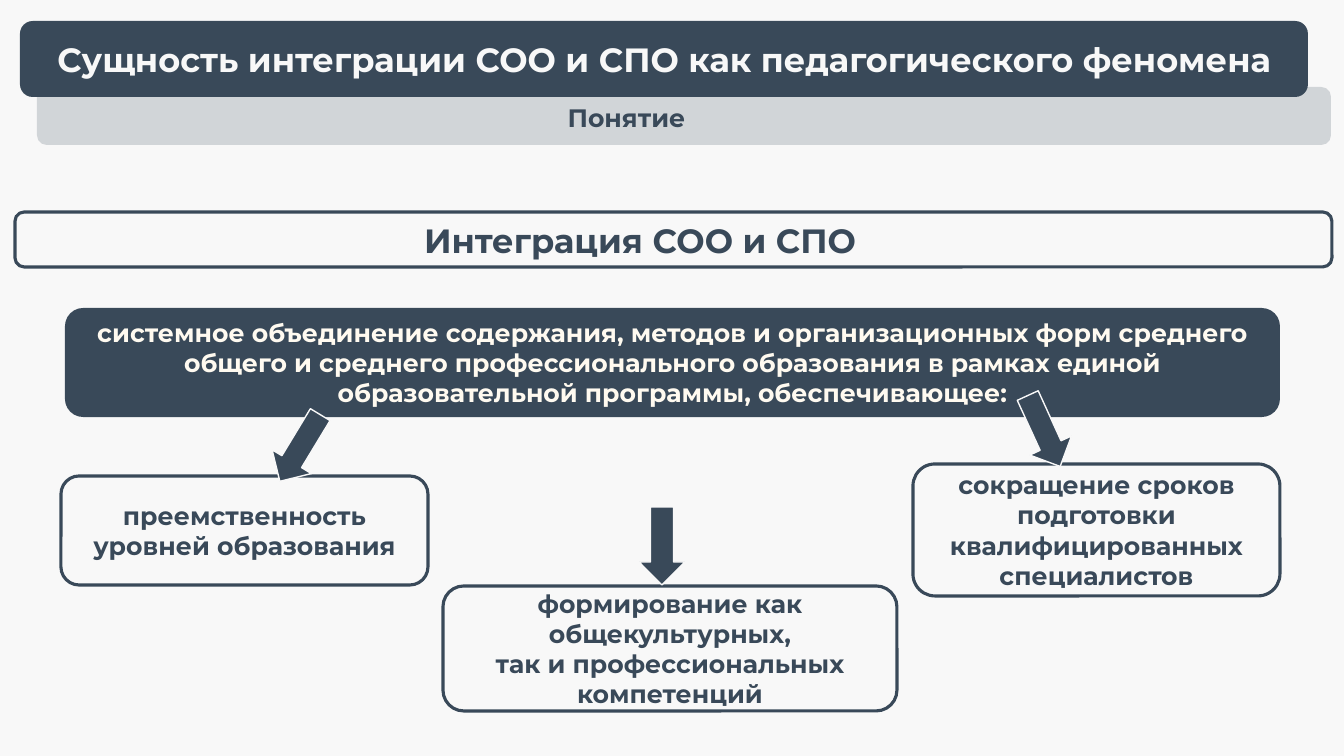
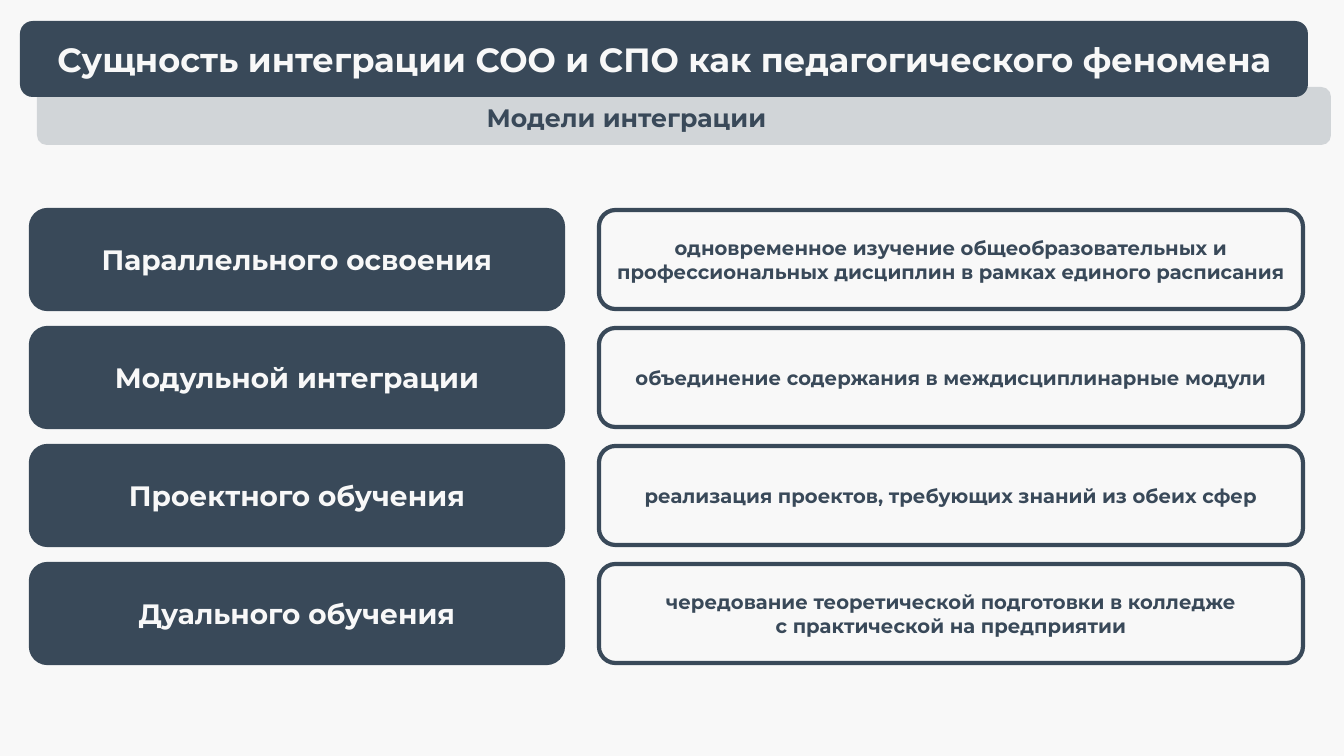
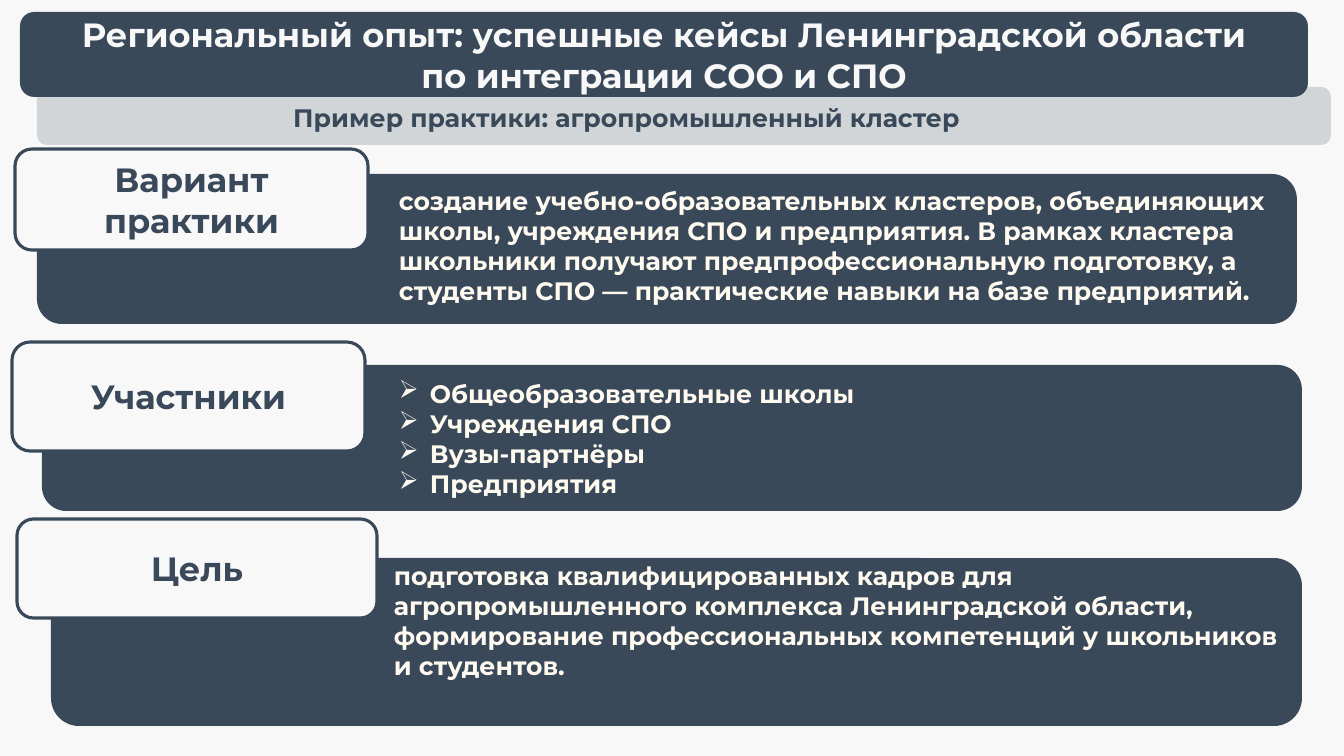
"""Three slides on integrating general secondary and vocational education."""
from lxml import etree
from pptx import Presentation
from pptx.dml.color import RGBColor
from pptx.enum.shapes import MSO_SHAPE
from pptx.enum.text import MSO_ANCHOR, PP_ALIGN
from pptx.oxml.ns import qn
from pptx.util import Emu, Pt

ROUND, ARROW = MSO_SHAPE.ROUNDED_RECTANGLE, MSO_SHAPE.DOWN_ARROW
LEFT, CENTER = PP_ALIGN.LEFT, PP_ALIGN.CENTER
TOP, MIDDLE = MSO_ANCHOR.TOP, MSO_ANCHOR.MIDDLE
SLATE, PAPER, CREAM = "394959", "F8F8F8", "FFFAF0"
FONT = "Montserrat"
BULLET, INDENT = "➢", 31

ESSENCE = "Сущность интеграции СОО и СПО как педагогического феномена"
REGION = "Региональный опыт: успешные кейсы Ленинградской области\nпо интеграции СОО и СПО"

TERM = "Интеграция СОО и СПО"
DEFINITION = ("системное объединение содержания, методов и организационных форм "
              "среднего общего и среднего профессионального образования в рамках "
              "единой образовательной программы, обеспечивающее:")
OUTCOMES = [
    ("преемственность уровней образования", (61, 476, 367, 109), (277, 409), 31.2),
    ("формирование как общекультурных,\nтак и профессиональных компетенций",
     (443, 586, 454, 125), (639, 507), 0),
    ("сокращение сроков подготовки квалифицированных специалистов",
     (913, 464, 367, 132), (1021, 392), 335.4),
]
MODELS = [
    ("Параллельного освоения",
     "одновременное изучение общеобразовательных и профессиональных дисциплин "
     "в рамках единого расписания"),
    ("Модульной интеграции", "объединение содержания в междисциплинарные модули"),
    ("Проектного обучения", "реализация проектов, требующих знаний из обеих сфер"),
    ("Дуального обучения",
     "чередование теоретической подготовки в колледже\nс практической на предприятии"),
]
CASE = [
    (["Вариант", "практики"], (15, 149, 353, 101), (37, 174, 1260, 150),
     ["создание учебно-образовательных кластеров, объединяющих школы, учреждения "
      "СПО и предприятия. В рамках кластера школьники получают предпрофессиональную "
      "подготовку, а студенты СПО — практические навыки на базе предприятий."],
     (389, 180, 897, 130), False),
    (["Участники"], (12, 342, 353, 109), (42, 365, 1260, 146),
     ["Общеобразовательные школы", "Учреждения СПО", "Вузы-партнёры", "Предприятия"],
     (389, 373, 897, 130), True),
    (["Цель"], (17, 519, 360, 99), (51, 558, 1251, 168),
     ["подготовка квалифицированных кадров для агропромышленного комплекса "
      "Ленинградской области, формирование профессиональных компетенций у школьников "
      "и студентов."],
     (384, 555, 907, 130), False),
]


def px(n):
    return Emu(round(n * 914400 / 100.8))


def rgb(value):
    return RGBColor.from_string(value)


def write(shape, paragraphs, size, color, align=CENTER, anchor=MIDDLE, bullets=False):
    tf = shape.text_frame
    tf.word_wrap = True
    tf.vertical_anchor = anchor
    for i, text in enumerate(paragraphs):
        p = tf.add_paragraph() if i else tf.paragraphs[0]
        p.text = text
        p.alignment = align
        for r in p.runs:
            r.font.name, r.font.size, r.font.bold = FONT, Pt(size), True
            r.font.color.rgb = rgb(color)
        if bullets:
            pPr = p._p.get_or_add_pPr()
            pPr.set("marL", str(px(INDENT)))
            pPr.set("indent", str(-px(INDENT)))
            etree.SubElement(pPr, qn("a:buChar")).set("char", BULLET)


def add_panel(s, at, fill=None, line=None, width=2.25, kind=ROUND):
    sp = s.shapes.add_shape(kind, *map(px, at))
    sp.shadow.inherit = False
    if fill:
        sp.fill.solid()
        sp.fill.fore_color.rgb = rgb(fill)
    else:
        sp.fill.background()
    if line:
        sp.line.color.rgb = rgb(line)
        sp.line.width = Pt(width)
    else:
        sp.line.fill.background()
    return sp


def add_text(s, at, paragraphs, size, color, align=CENTER, bullets=False):
    tb = s.shapes.add_textbox(*map(px, at))
    write(tb, paragraphs, size, color, align, TOP, bullets)


def add_slide(prs, title, subtitle, top=21):
    s = prs.slides.add_slide(prs.slide_layouts[6])
    s.background.fill.solid()
    s.background.fill.fore_color.rgb = rgb(PAPER)
    band = add_panel(s, (37, 87, 1294, 58), SLATE)
    tint = band._element.spPr.find(qn("a:solidFill")).find(qn("a:srgbClr"))
    etree.SubElement(tint, qn("a:alpha")).set("val", "20000")
    add_text(s, (114, 97, 1025, 40), [subtitle], 18, SLATE)
    write(add_panel(s, (20, top, 1288, 97 - top), SLATE), [title], 24, PAPER)
    return s


def concept_slide(prs):
    s = add_slide(prs, ESSENCE, "Понятие")
    add_panel(s, (15, 212, 1317, 55), PAPER, SLATE)
    add_text(s, (26, 215, 1228, 50), [TERM], 24, SLATE)
    write(add_panel(s, (65, 308, 1215, 109), SLATE), [DEFINITION], 18, CREAM)
    for text, box, _, _ in OUTCOMES:
        write(add_panel(s, box, line=SLATE), [text], 18, SLATE)
    for _, _, corner, angle in OUTCOMES:
        arrow = add_panel(s, (*corner, 46, 78), SLATE, PAPER, 1, ARROW)
        arrow.rotation = angle


def models_slide(prs):
    s = add_slide(prs, ESSENCE, "Модели интеграции")
    top, pitch, height = 210, 118, 99
    for i, (name, meaning) in enumerate(MODELS):
        y = top + i * pitch
        write(add_panel(s, (31, y, 532, height), SLATE, SLATE, 3), [name], 20, PAPER)
        write(add_panel(s, (599, y, 704, height), line=SLATE, width=3),
              [meaning], 14, SLATE)


def case_slide(prs):
    s = add_slide(prs, REGION, "Пример практики: агропромышленный кластер", 12)
    for label, label_at, panel_at, body, body_at, bullets in CASE:
        add_panel(s, panel_at, SLATE)
        add_text(s, body_at, body, 18, CREAM, LEFT, bullets)
        write(add_panel(s, label_at, PAPER, SLATE), label, 24, SLATE)


def main():
    prs = Presentation()
    prs.slide_width, prs.slide_height = px(1344), px(756)
    concept_slide(prs)
    models_slide(prs)
    case_slide(prs)
    prs.save("out.pptx")


if __name__ == "__main__":
    main()
